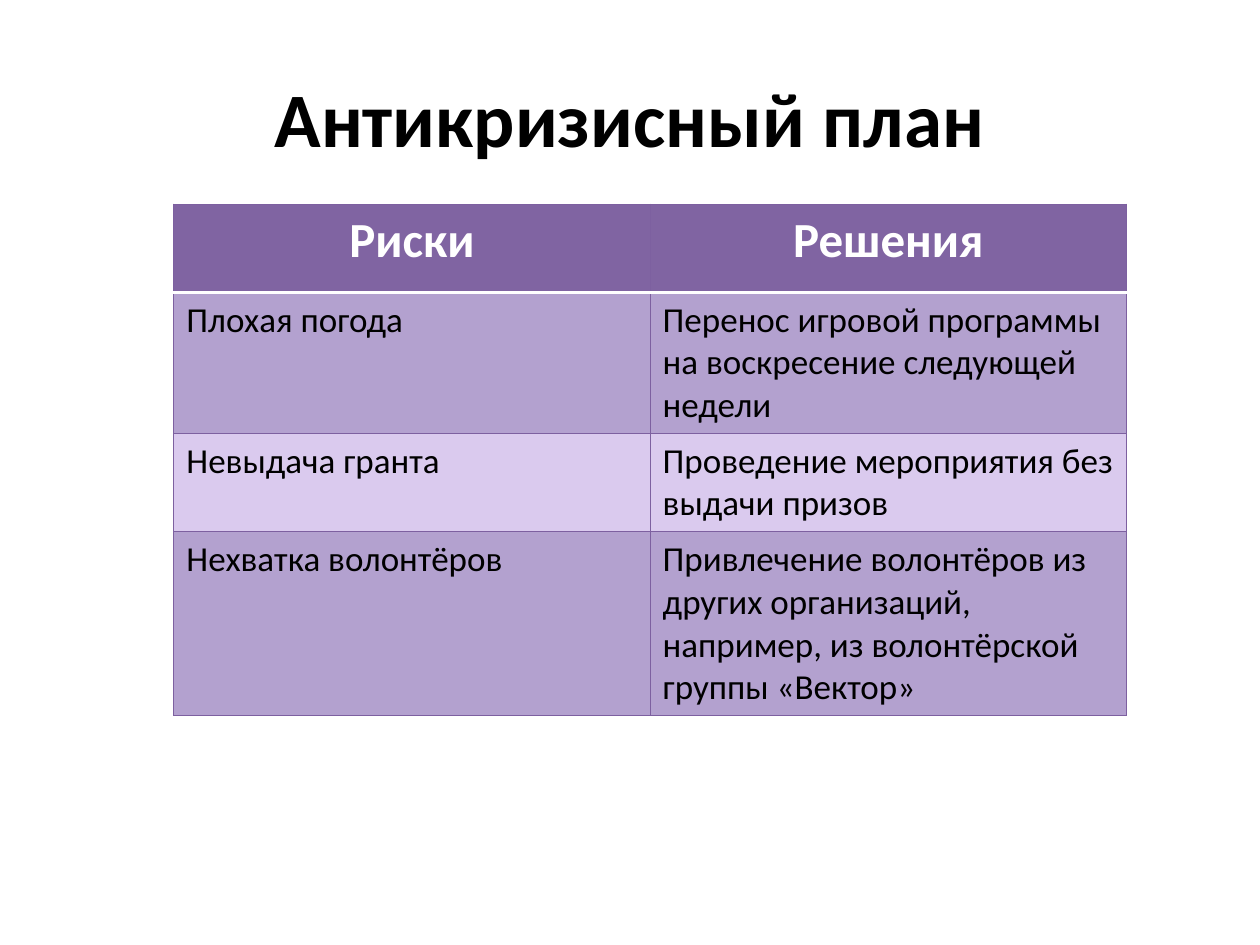
import pptx
import pptx.dml.color
import pptx.enum.text
import pptx.oxml
import pptx.oxml.ns
import pptx.util

Inches = pptx.util.Inches
Pt = pptx.util.Pt
RGBColor = pptx.dml.color.RGBColor
Align = pptx.enum.text.PP_ALIGN

BLACK = RGBColor(0x00, 0x00, 0x00)
WHITE = RGBColor(0xFF, 0xFF, 0xFF)
PURPLE = RGBColor(0x80, 0x64, 0xA2)
BORDER = RGBColor(0x7D, 0x60, 0xA0)
BAND_DARK = RGBColor(0xB3, 0xA1, 0xCF)
BAND_LIGHT = RGBColor(0xDA, 0xCA, 0xEE)

RISKS = [
    ("Риски", "Решения"),
    ("Плохая погода", "Перенос игровой программы на воскресение следующей недели"),
    ("Невыдача гранта", "Проведение мероприятия без выдачи призов"),
    ("Нехватка волонтёров",
     "Привлечение волонтёров из других организаций, например, из волонтёрской группы «Вектор»"),
]
ROW_HEIGHTS = [0.7, 1.12, 0.78, 1.46]


def style_paragraph(para, size, color, bold, align):
    para.alignment = align
    para.font.name = "Calibri"
    para.font.size = Pt(size)
    para.font.bold = bold
    para.font.color.rgb = color


def set_borders(cell, edges):
    properties = cell._tc.get_or_add_tcPr()
    for index, (side, (color, width)) in enumerate(edges.items()):
        line = pptx.oxml.parse_xml(
            f'<a:ln{side} {pptx.oxml.ns.nsdecls("a")} w="{Pt(width)}">'
            f'<a:solidFill><a:srgbClr val="{color}"/></a:solidFill></a:ln{side}>')
        properties.insert(index, line)


def add_title(page, left, top, width, height):
    box = page.shapes.add_textbox(Inches(left), Inches(top), Inches(width), Inches(height))
    frame = box.text_frame
    frame.word_wrap = True
    frame.vertical_anchor = pptx.enum.text.MSO_ANCHOR.MIDDLE
    frame.text = "Антикризисный план"
    style_paragraph(frame.paragraphs[0], 44, BLACK, True, Align.CENTER)


def add_risk_table(page, left, top, width):
    columns = len(RISKS[0])
    table = page.shapes.add_table(
        len(RISKS), columns, Inches(left), Inches(top),
        Inches(width), Inches(sum(ROW_HEIGHTS))).table
    for column in table.columns:
        column.width = Inches(width / columns)
    thin, thick = (BORDER, 0.75), (WHITE, 2)
    for row, (texts, height) in enumerate(zip(RISKS, ROW_HEIGHTS)):
        table.rows[row].height = Inches(height)
        header = row == 0
        band = PURPLE if header else BAND_DARK if row % 2 else BAND_LIGHT
        for column, text in enumerate(texts):
            cell = table.cell(row, column)
            cell.text = text
            cell.fill.solid()
            cell.fill.fore_color.rgb = band
            para = cell.text_frame.paragraphs[0]
            if header:
                style_paragraph(para, 28, WHITE, True, Align.CENTER)
            else:
                style_paragraph(para, 20, BLACK, False, Align.LEFT)
            set_borders(cell, {"L": thin, "R": thin,
                               "T": thick if row == 1 else thin,
                               "B": thick if header else thin})


def main():
    deck = pptx.Presentation()
    deck.slide_width, deck.slide_height = Inches(10), Inches(7.5)
    page = deck.slides.add_slide(deck.slide_layouts[6])
    add_title(page, 0.5, 0.3, 9, 1.25)
    add_risk_table(page, 1.38, 1.62, 7.56)
    deck.save("out.pptx")


if __name__ == "__main__":
    main()
